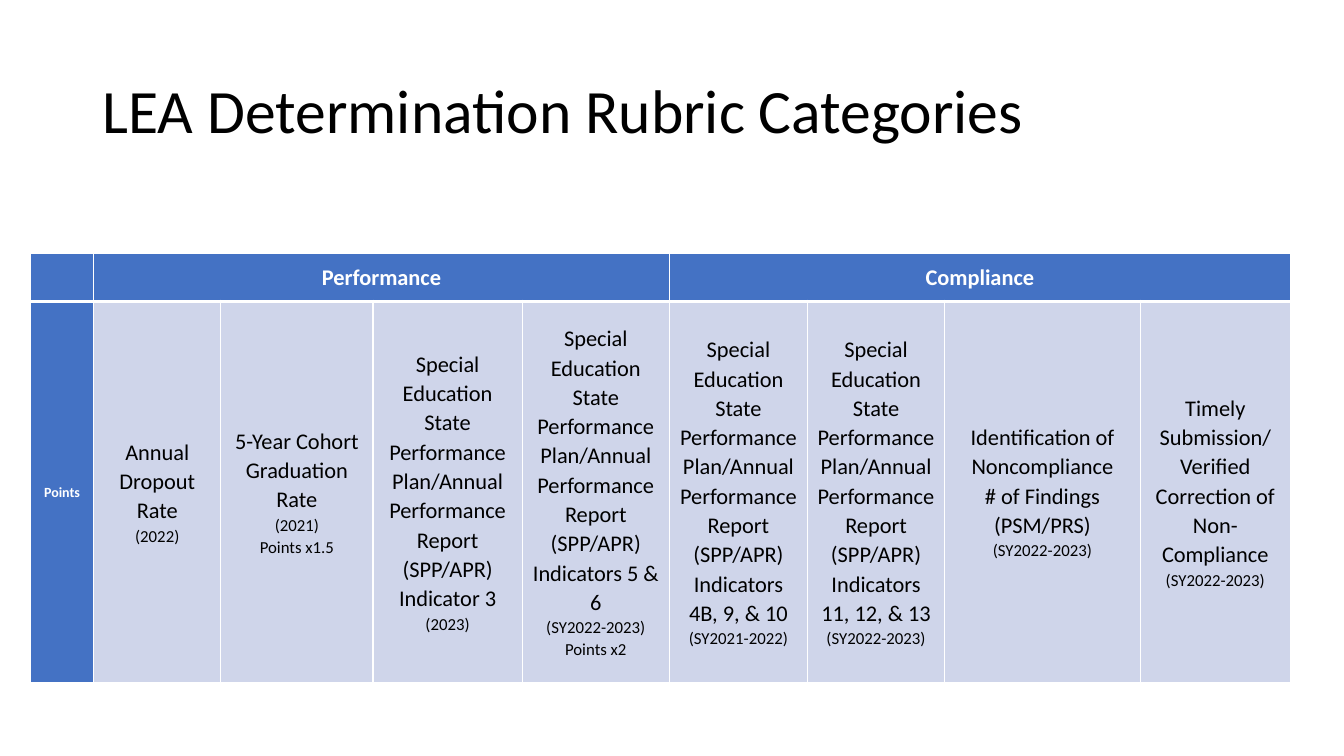
import pptx
import pptx.dml.color
import pptx.enum.text
import pptx.oxml
import pptx.oxml.ns
import pptx.util

SLIDE_WIDTH, SLIDE_HEIGHT = 13.33, 7.5
FONT = "Calibri"
COLORS = {"header": "4472C4", "category": "CFD5EA", "light": "FFFFFF", "dark": "000000"}

COLUMN_WIDTHS = [0.63, 1.26, 1.51, 1.48, 1.46, 1.37, 1.36, 1.94, 1.49]
ROW_HEIGHTS = [0.48, 3.78]
GROUPS = [("Performance", 1, 4), ("Compliance", 5, 8)]
REPORT = "Special Education State Performance Plan/Annual Performance Report (SPP/APR)"

# Each category: main lines, then smaller detail lines
CATEGORIES = [
    (["Annual Dropout Rate"], ["(2022)"]),
    (["5-Year Cohort Graduation Rate"], ["(2021)", "Points x1.5"]),
    ([f"{REPORT} Indicator 3"], ["(2023)"]),
    ([REPORT, "Indicators 5 & 6"], ["(SY2022-2023)", "Points x2"]),
    ([f"{REPORT} Indicators", "4B, 9, & 10"], ["(SY2021-2022)"]),
    ([f"{REPORT} Indicators", "11, 12, & 13"], ["(SY2022-2023)"]),
    (["Identification of Noncompliance", "# of Findings (PSM/PRS)"], ["(SY2022-2023)"]),
    (["Timely Submission/ Verified Correction of Non-Compliance"], ["(SY2022-2023)"]),
]


def rgb(name):
    return pptx.dml.color.RGBColor.from_string(COLORS[name])


def style_font(font, size, color, bold=False):
    font.name = FONT
    font.size = pptx.util.Pt(size)
    font.bold = bold
    font.color.rgb = rgb(color)


def style_cell(cell, fill, top=1, bottom=1):
    """Set borders (widths in points), fill, margins and anchor of a cell."""
    properties = cell._tc.get_or_add_tcPr()
    for side, width in (("L", 1), ("R", 1), ("T", top), ("B", bottom)):
        properties.append(pptx.oxml.parse_xml(
            f'<a:ln{side} {pptx.oxml.ns.nsdecls("a")} w="{pptx.util.Pt(width)}">'
            f'<a:solidFill><a:srgbClr val="{COLORS["light"]}"/></a:solidFill></a:ln{side}>'))
    cell.fill.solid()
    cell.fill.fore_color.rgb = rgb(fill)
    cell.margin_left = cell.margin_right = pptx.util.Inches(0.07)
    cell.margin_top = cell.margin_bottom = 0
    cell.vertical_anchor = pptx.enum.text.MSO_ANCHOR.MIDDLE


def write_cell(cell, lines, color, bold=False):
    """Write (text, size) lines as centred paragraphs."""
    frame = cell.text_frame
    for index, (text, size) in enumerate(lines):
        paragraph = frame.add_paragraph() if index else frame.paragraphs[0]
        paragraph.text = text
        paragraph.alignment = pptx.enum.text.PP_ALIGN.CENTER
        paragraph.line_spacing = 1.07
        style_font(paragraph.font, size, color, bold)


def add_title(slide, left, top, width, height):
    shape = slide.shapes.add_textbox(*map(pptx.util.Inches, (left, top, width, height)))
    frame = shape.text_frame
    frame.word_wrap = True
    frame.vertical_anchor = pptx.enum.text.MSO_ANCHOR.MIDDLE
    paragraph = frame.paragraphs[0]
    paragraph.text = "LEA Determination Rubric Categories"
    paragraph.line_spacing = 0.9
    style_font(paragraph.font, 44, "dark")


def add_rubric(slide, left, top, width, height):
    table = slide.shapes.add_table(
        len(ROW_HEIGHTS), len(COLUMN_WIDTHS),
        *map(pptx.util.Inches, (left, top, width, height))).table
    table.horz_banding = False
    for column, share in zip(table.columns, COLUMN_WIDTHS):
        column.width = pptx.util.Inches(width * share / sum(COLUMN_WIDTHS))
    for row, share in zip(table.rows, ROW_HEIGHTS):
        row.height = pptx.util.Inches(height * share / sum(ROW_HEIGHTS))

    # Fills and borders, with a thick rule below the header row
    for index in range(len(COLUMN_WIDTHS)):
        style_cell(table.cell(0, index), "header", bottom=3)
        style_cell(table.cell(1, index), "category" if index else "header", top=3)

    # Group headings
    for heading, first, last in GROUPS:
        table.cell(0, first).merge(table.cell(0, last))
        write_cell(table.cell(0, first), [(heading, 16)], "light", bold=True)

    # Row heading and categories
    write_cell(table.cell(1, 0), [("Points", 10)], "light", bold=True)
    for index, (main, details) in enumerate(CATEGORIES, start=1):
        lines = [(text, 16) for text in main] + [(text, 12) for text in details]
        write_cell(table.cell(1, index), lines, "dark")


def main():
    presentation = pptx.Presentation()
    presentation.slide_width = pptx.util.Inches(SLIDE_WIDTH)
    presentation.slide_height = pptx.util.Inches(SLIDE_HEIGHT)
    slide = presentation.slides.add_slide(presentation.slide_layouts[6])
    add_title(slide, 0.92, 0.4, 11.5, 1.45)
    add_rubric(slide, 0.3, 2.51, sum(COLUMN_WIDTHS), sum(ROW_HEIGHTS))
    presentation.save("out.pptx")


if __name__ == "__main__":
    main()
